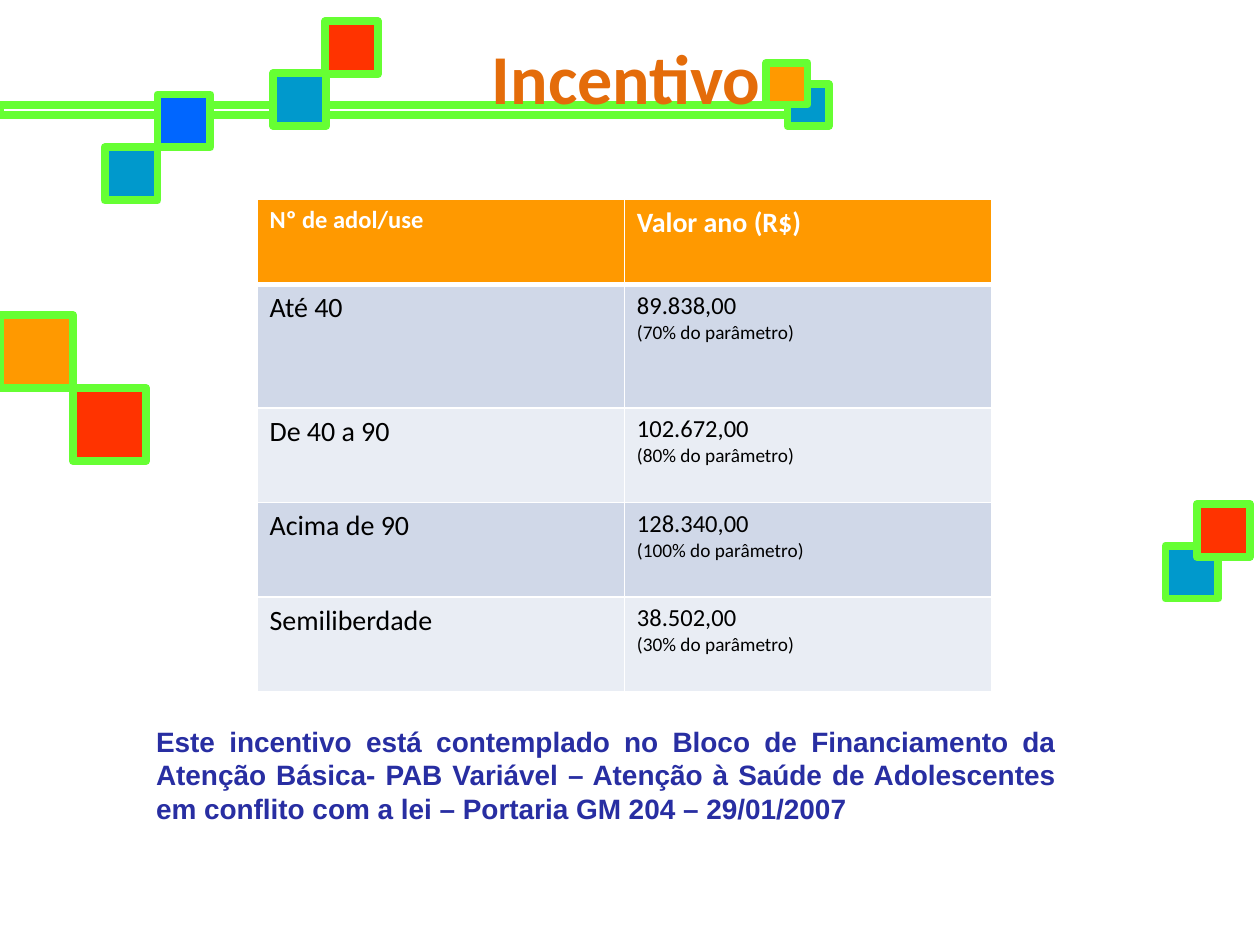
import pptx
import pptx.chart.data
import pptx.dml.color
import pptx.enum.shapes
import pptx.enum.text
import pptx.oxml.ns
import pptx.util
import lxml.etree

Inches = pptx.util.Inches
Pt = pptx.util.Pt
PP_ALIGN = pptx.enum.text.PP_ALIGN
MSO_ANCHOR = pptx.enum.text.MSO_ANCHOR

GREEN, TEAL, ORANGE, RED, BLUE = "66FF33", "0099CC", "FF9900", "FF3300", "0066FF"
WHITE, BLACK = "FFFFFF", "000000"

# left, top, side, fill
SQUARES = [
    (6.25, 0.67, 0.33, TEAL),
    (6.08, 0.5, 0.33, ORANGE),
    (9.25, 4.33, 0.42, TEAL),
    (9.5, 4, 0.42, RED),
    (0, 2.5, 0.58, ORANGE),
    (0.58, 3.08, 0.58, RED),
    (2.17, 0.58, 0.42, TEAL),
    (0.83, 1.17, 0.42, TEAL),
    (1.25, 0.75, 0.42, BLUE),
    (2.58, 0.17, 0.42, RED),
]

HEADER = ["Nº de adol/use", "Valor ano (R$)"]
ROWS = [
    ("Até 40", "89.838,00", "(70% do parâmetro)"),
    ("De 40 a 90", "102.672,00", "(80% do parâmetro)"),
    ("Acima de 90", "128.340,00", "(100% do parâmetro)"),
    ("Semiliberdade", "38.502,00", "(30% do parâmetro)"),
]
ROW_HEIGHTS = [0.68, 0.98, 0.75, 0.75, 0.75]
BANDS = ["D0D8E8", "E9EDF4"]

NOTE = ("Este incentivo está contemplado no Bloco de Financiamento da Atenção "
        "Básica- PAB Variável – Atenção à Saúde de Adolescentes em conflito com "
        "a lei – Portaria GM 204 – 29/01/2007")


def rgb(value):
    return pptx.dml.color.RGBColor.from_string(value)


def format_paragraph(p, size, color, bold=False, font="Calibri"):
    for r in p.runs:
        r.font.name = font
        r.font.size = Pt(size)
        r.font.bold = bold
        r.font.color.rgb = rgb(color)


def add_box(s, left, top, width, height, fill=None):
    sp = s.shapes.add_shape(pptx.enum.shapes.MSO_SHAPE.RECTANGLE, Inches(left),
                            Inches(top), Inches(width), Inches(height))
    sp.shadow.inherit = False
    if fill:
        sp.fill.solid()
        sp.fill.fore_color.rgb = rgb(fill)
    else:
        sp.fill.background()
    sp.line.color.rgb = rgb(GREEN)
    sp.line.width = Pt(4.5)


def add_text(s, left, top, width, height, text, size, color, font, align,
             anchor=MSO_ANCHOR.TOP):
    sp = s.shapes.add_textbox(Inches(left), Inches(top), Inches(width), Inches(height))
    tf = sp.text_frame
    tf.word_wrap = True
    tf.vertical_anchor = anchor
    tf.text = text
    p = tf.paragraphs[0]
    p.alignment = align
    format_paragraph(p, size, color, bold=True, font=font)


def set_borders(cell, top, bottom):
    qn = pptx.oxml.ns.qn
    tc_pr = cell._tc.get_or_add_tcPr()
    for side, width in (("L", 1), ("R", 1), ("T", top), ("B", bottom)):
        ln = lxml.etree.SubElement(tc_pr, qn("a:ln" + side), w=str(Pt(width)))
        fill = lxml.etree.SubElement(ln, qn("a:solidFill"))
        lxml.etree.SubElement(fill, qn("a:srgbClr"), val=WHITE)


def fill_cell(cell, lines, sizes, color, fill, bold=False, top=1, bottom=1):
    set_borders(cell, top, bottom)
    cell.fill.solid()
    cell.fill.fore_color.rgb = rgb(fill)
    cell.text_frame.text = "\n".join(lines)
    for p, size in zip(cell.text_frame.paragraphs, sizes):
        format_paragraph(p, size, color, bold)


def add_incentive_table(s):
    frame = s.shapes.add_table(len(ROWS) + 1, 2, Inches(2.04), Inches(1.58),
                               Inches(5.83), Inches(sum(ROW_HEIGHTS)))
    table = frame.table
    for row, height in zip(table.rows, ROW_HEIGHTS):
        row.height = Inches(height)

    for col, (text, size) in enumerate(zip(HEADER, (14, 16))):
        fill_cell(table.cell(0, col), [text], [size], WHITE, ORANGE,
                  bold=True, bottom=3)
    for i, (label, value, share) in enumerate(ROWS):
        top = 3 if i == 0 else 1
        band = BANDS[i % 2]
        fill_cell(table.cell(i + 1, 0), [label], [16], BLACK, band, top=top)
        fill_cell(table.cell(i + 1, 1), [value, share], [14, 11], BLACK, band, top=top)


def main():
    prs = pptx.Presentation()
    prs.slide_width, prs.slide_height = Inches(10), Inches(7.5)
    s = prs.slides.add_slide(prs.slide_layouts[6])

    # Decoration: long bar and squares
    add_box(s, 0, 0.83, 6.42, 0.08)
    for left, top, side, fill in SQUARES:
        add_box(s, left, top, side, side, fill)

    # Title, table and closing note
    add_text(s, 0.28, 0.13, 9.38, 0.95, "Incentivo", 40, "E46C0A", "Calibri",
             PP_ALIGN.CENTER, MSO_ANCHOR.MIDDLE)
    add_incentive_table(s)
    add_text(s, 1.14, 5.7, 7.34, 1.21, NOTE, 16, "282EA2", "Arial", PP_ALIGN.JUSTIFY)

    prs.save("out.pptx")


if __name__ == "__main__":
    main()
